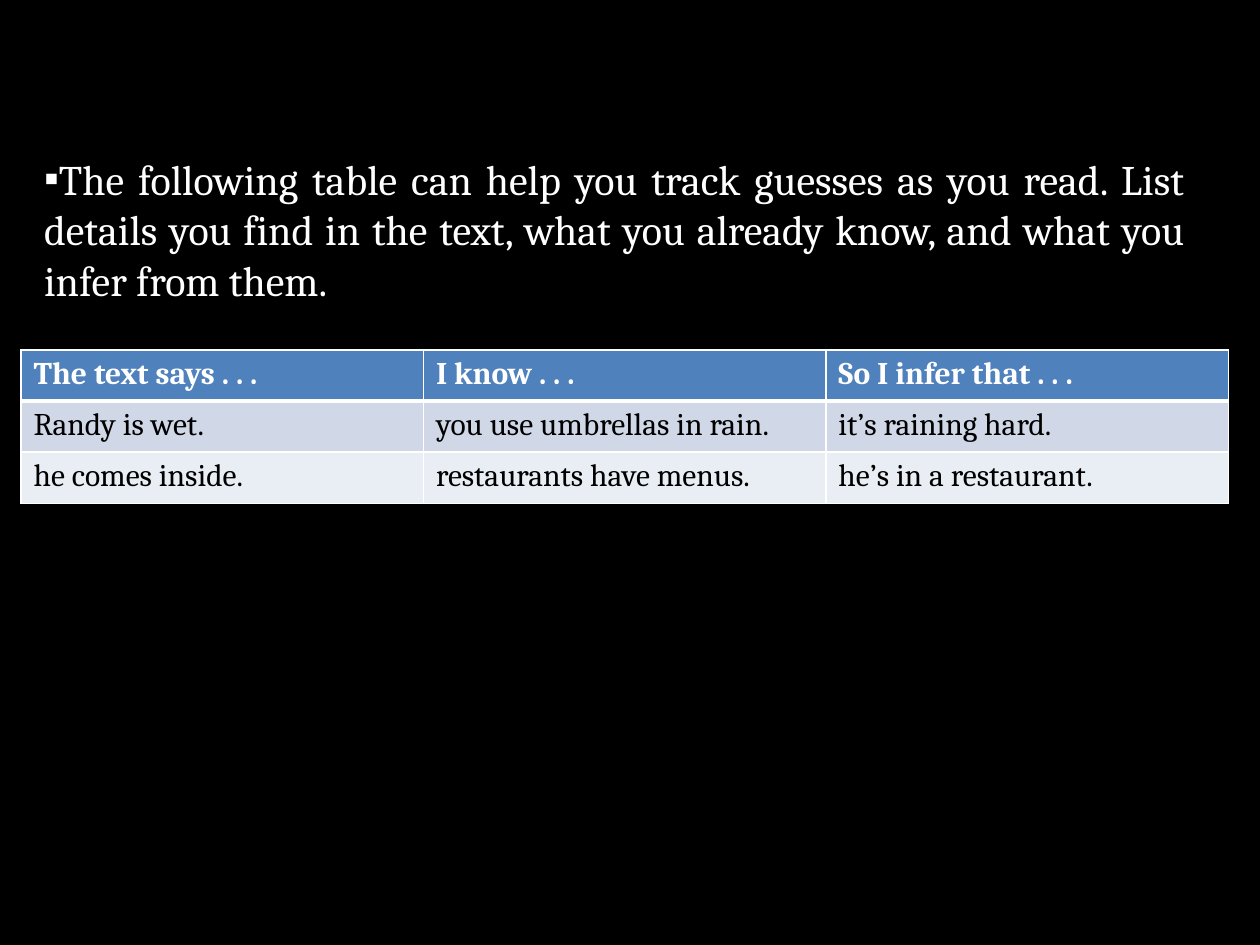
from dataclasses import dataclass

from lxml import etree
from pptx import Presentation
from pptx.dml.color import RGBColor as Rgb
from pptx.enum import text as t
from pptx.oxml import ns
from pptx.util import Pt


@dataclass(frozen=True)
class Theme:
    font: str = "Cambria"
    back: str = "000000"
    light: str = "FFFFFF"
    dark: str = "000000"
    head: str = "4F81BD"
    bands: tuple = ("D0D8E8", "E9EDF4")
    lead: int = 24
    cell: int = 18
    rule: int = 1
    thick: int = 3


THEME = Theme()

LEAD = ("The following table can help you track guesses as you read. "
        "List details you find in the text, what you already know, "
        "and what you infer from them.")
ROWS = [
    ("The text says . . .", "I know . . .", "So I infer that . . ."),
    ("Randy is wet.", "you use umbrellas in rain.", "it’s raining hard."),
    ("he comes inside.", "restaurants have menus.", "he’s in a restaurant."),
]


def add_run(para, words, size, color, bold=False):
    run = para.add_run()
    run.text = words
    font = run.font
    font.name, font.size, font.bold = THEME.font, Pt(size), bold
    font.color.rgb = Rgb.from_string(color)


def add_mark(para, char):
    """Bullet set flush with the text, with no hanging indent."""
    props = para._p.get_or_add_pPr()
    props.set("marL", "0")
    props.set("indent", "0")
    etree.SubElement(props, ns.qn("a:buFont")).set("typeface", "Arial")
    etree.SubElement(props, ns.qn("a:buChar")).set("char", char)


def add_rules(cell, base):
    """White rules on all four sides; base is the width below."""
    props = cell._tc.get_or_add_tcPr()
    widths = {"lnL": THEME.rule, "lnR": THEME.rule,
              "lnT": THEME.rule, "lnB": base}
    for place, (side, width) in enumerate(widths.items()):
        line = etree.Element(ns.qn("a:" + side), w=str(int(Pt(width))))
        fill = etree.SubElement(line, ns.qn("a:solidFill"))
        etree.SubElement(fill, ns.qn("a:srgbClr")).set("val", THEME.light)
        props.insert(place, line)


def fill_lead(shape, box):
    """Opening instruction in the body placeholder."""
    shape.left, shape.top, shape.width, shape.height = map(Pt, box)
    frame = shape.text_frame
    frame.word_wrap = True
    frame.auto_size = t.MSO_AUTO_SIZE.SHAPE_TO_FIT_TEXT
    para = frame.paragraphs[0]
    para.alignment = t.PP_ALIGN.JUSTIFY
    para.space_before = Pt(0)
    add_mark(para, "▪")
    add_run(para, LEAD, THEME.lead, THEME.light)


def add_grid(slide, box):
    """Inference table: header row, then banded rows."""
    left, top, width, height = box
    count = len(ROWS[0])
    grid = slide.shapes.add_table(len(ROWS), count, *map(Pt, box)).table
    for col in grid.columns:
        col.width = Pt(width / count)
    for r, words in enumerate(ROWS):
        grid.rows[r].height = Pt(height / len(ROWS))
        first = r == 0
        shade = THEME.head if first else THEME.bands[(r - 1) % 2]
        color = THEME.light if first else THEME.dark
        for c, word in enumerate(words):
            cell = grid.cell(r, c)
            cell.fill.solid()
            cell.fill.fore_color.rgb = Rgb.from_string(shade)
            add_rules(cell, THEME.thick if first else THEME.rule)
            add_run(cell.text_frame.paragraphs[0], word,
                    THEME.cell, color, first)


def main():
    deck = Presentation()
    deck.slide_width, deck.slide_height = Pt(720), Pt(540)
    slide = deck.slides.add_slide(deck.slide_layouts[1])
    slide.background.fill.solid()
    slide.background.fill.fore_color.rgb = Rgb.from_string(THEME.back)

    # This slide has no title
    title = slide.shapes.title._element
    title.getparent().remove(title)

    fill_lead(slide.placeholders[1], (18, 84, 666, 94.5))
    add_grid(slide, (12, 200, 690, 87.6))
    deck.save("out.pptx")


if __name__ == "__main__":
    main()
